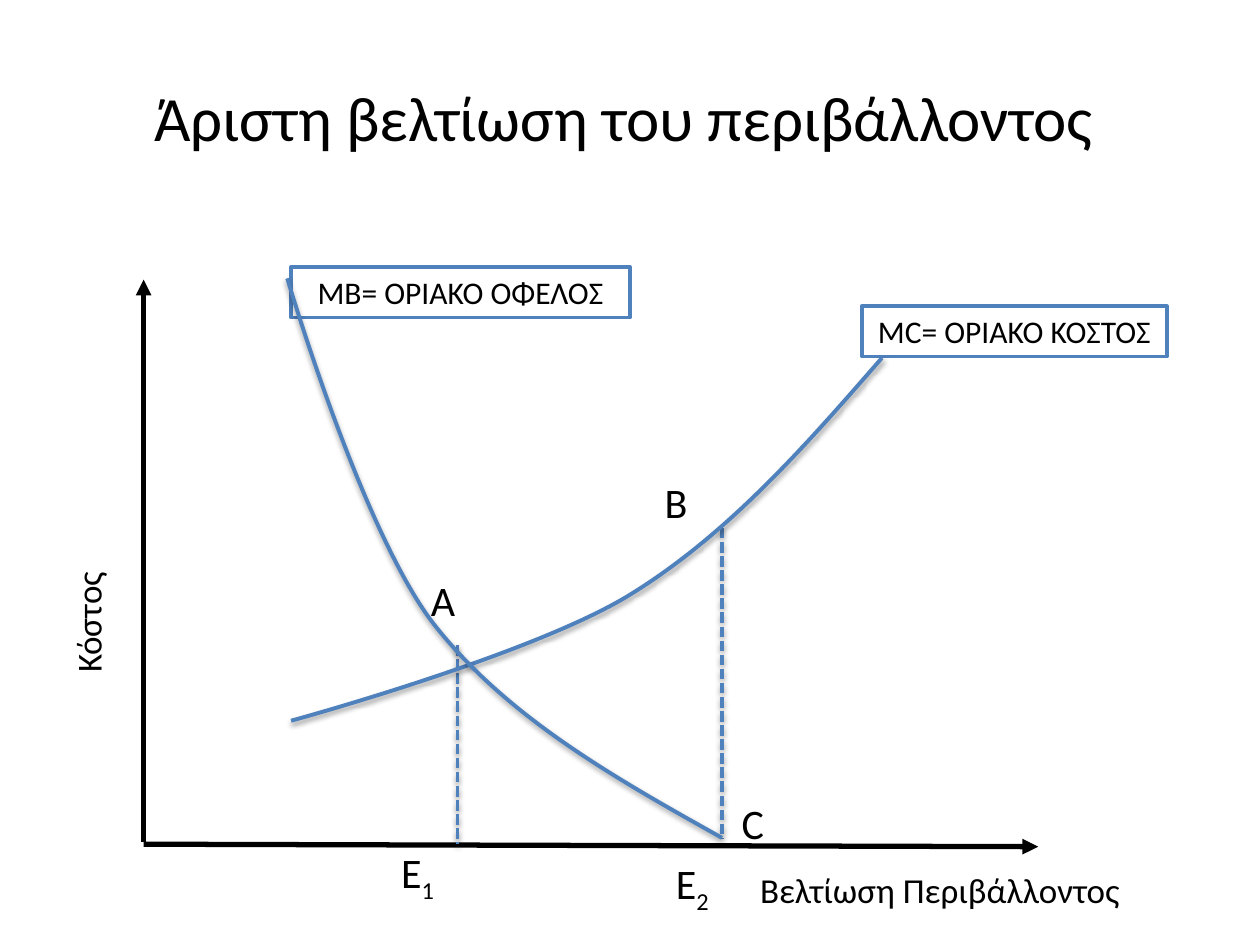
from lxml import etree
from pptx import Presentation
from pptx.dml.color import RGBColor
from pptx.enum.dml import MSO_LINE
from pptx.enum.shapes import MSO_CONNECTOR, MSO_SHAPE
from pptx.enum.text import MSO_ANCHOR, PP_ALIGN
from pptx.oxml.ns import qn
from pptx.util import Inches, Pt

STRAIGHT, RECTANGLE = MSO_CONNECTOR.STRAIGHT, MSO_SHAPE.RECTANGLE
DASH, CENTER = MSO_LINE.SQUARE_DOT, PP_ALIGN.CENTER
TOP, MIDDLE = MSO_ANCHOR.TOP, MSO_ANCHOR.MIDDLE

THEME = {
    "font": "Calibri",
    "ink": RGBColor(0x00, 0x00, 0x00),
    "paper": RGBColor(0xFF, 0xFF, 0xFF),
    "curve": RGBColor(0x4F, 0x81, 0xBD),
    "title": Pt(36), "point": Pt(24), "axis": Pt(20), "key": Pt(18),
    "axis_line": Pt(3), "curve_line": Pt(2.25), "thin_line": Pt(2),
}

deck = Presentation()
deck.slide_width, deck.slide_height = Inches(10), Inches(7.5)
page = deck.slides.add_slide(deck.slide_layouts[6])

# Grid of 100 columns by 75 rows
COLUMN, ROW = deck.slide_width / 100, deck.slide_height / 75


def write(box, text, size, anchor=TOP, subscript=""):
    """Centre black text in a box, with an optional subscript run."""
    frame = box.text_frame
    frame.word_wrap = True
    frame.vertical_anchor = anchor
    para = frame.paragraphs[0]
    para.alignment = CENTER
    for part in filter(None, (text, subscript)):
        span = para.add_run()
        span.text = part
        span.font.name, span.font.size = THEME["font"], size
        span.font.color.rgb = THEME["ink"]
    if subscript:
        span.font._element.set("baseline", "-25000")


def stroke(shape, color, width, shadow=False):
    """Set the line of a shape and replace its default shadow."""
    shape.line.color.rgb, shape.line.width = color, width
    effects = etree.SubElement(shape._element.spPr, qn("a:effectLst"))
    if shadow:
        outer = etree.SubElement(effects, qn("a:outerShdw"), blurRad=str(Pt(3.1)),
                                 dist=str(Pt(1.6)), dir="5400000", rotWithShape="0")
        black = etree.SubElement(outer, qn("a:srgbClr"), val="000000")
        etree.SubElement(black, qn("a:alpha"), val="38000")


# Title, axis names and point labels: text, subscript, size, anchor, place, turn
labels = [
    ("Άριστη βελτίωση του περιβάλλοντος", "", "title", MIDDLE, (4.5, 3, 90, 12.5), 0),
    ("Κόστος", "", "axis", TOP, (1.4, 47.2, 11.2, 4.4), 270),
    ("Βελτίωση Περιβάλλοντος", "", "axis", TOP, (58.1, 68.4, 33, 4.4), 0),
    ("A", "", "point", TOP, (31.4, 45.1, 7.5, 5), 0),
    ("B", "", "point", TOP, (49.9, 37.3, 7.5, 5), 0),
    ("C", "", "point", TOP, (56, 62.8, 7.5, 5), 0),
    ("Ε", "1", "point", TOP, (29.8, 66.7, 6.7, 5), 0),
    ("Ε", "2", "point", TOP, (51.6, 67.6, 6.7, 5), 0),
]
for text, subscript, size, anchor, (left, top, width, height), turn in labels:
    box = page.shapes.add_textbox(round(left * COLUMN), round(top * ROW),
                                  round(width * COLUMN), round(height * ROW))
    box.rotation = turn
    write(box, text, THEME[size], anchor, subscript)

# Framed names of the two curves
keys = [
    ("MC= OΡΙΑΚΟ ΚΟΣΤΟΣ", 68.4, 24.3, 24.2),
    ("ΜΒ= ΟΡΙΑΚΟ ΟΦΕΛΟΣ", 23.1, 21.2, 26.9),
]
for text, left, top, width in keys:
    box = page.shapes.add_shape(RECTANGLE, round(left * COLUMN), round(top * ROW),
                                round(width * COLUMN), round(4 * ROW))
    box.fill.solid()
    box.fill.fore_color.rgb = THEME["paper"]
    stroke(box, THEME["curve"], THEME["thin_line"])
    write(box, text, THEME["key"])

# Axes with arrowheads, and dashed drops from the curves
lines = [
    ((11.4, 66.8), (11.4, 22.2), True),
    ((11.4, 67), (82.4, 67.2), True),
    ((36.3, 51.2), (36.3, 67), False),
    ((57.3, 41.9), (57.3, 66.5), False),
]
for (x1, y1), (x2, y2), is_axis in lines:
    line = page.shapes.add_connector(STRAIGHT, round(x1 * COLUMN), round(y1 * ROW),
                                     round(x2 * COLUMN), round(y2 * ROW))
    if is_axis:
        stroke(line, THEME["ink"], THEME["axis_line"])
        etree.SubElement(line.line._get_or_add_ln(), qn("a:tailEnd"), type="triangle")
    else:
        stroke(line, THEME["curve"], THEME["thin_line"], shadow=True)
        line.line.dash_style = DASH

# Marginal cost and marginal benefit: a start, then three points per Bezier arc
curves = [
    [(70, 28.4), (63.9, 35.4), (57.8, 42.4), (50, 47.2),
     (42.2, 52), (23.1, 57.2), (23.1, 57.2)],
    [(57.3, 66.5), (48.7, 61.7), (40.2, 56.9), (34.4, 49.5),
     (28.7, 42.1), (22.8, 22.1), (22.8, 22.1)],
]
for points in curves:
    start, *rest = [(round(x * COLUMN), round(y * ROW)) for x, y in points]
    builder = page.shapes.build_freeform(*start)
    builder.add_line_segments(rest, close=False)
    curve = builder.convert_to_shape()
    curve.fill.background()
    stroke(curve, THEME["curve"], THEME["curve_line"], shadow=True)
    # Turn each three straight segments into one cubic arc
    outline = curve._element.find(".//" + qn("a:path"))
    segments = outline.findall(qn("a:lnTo"))
    for first in range(0, len(segments), 3):
        arc = etree.SubElement(outline, qn("a:cubicBezTo"))
        for segment in segments[first:first + 3]:
            arc.append(segment[0])
            outline.remove(segment)

deck.save("out.pptx")
